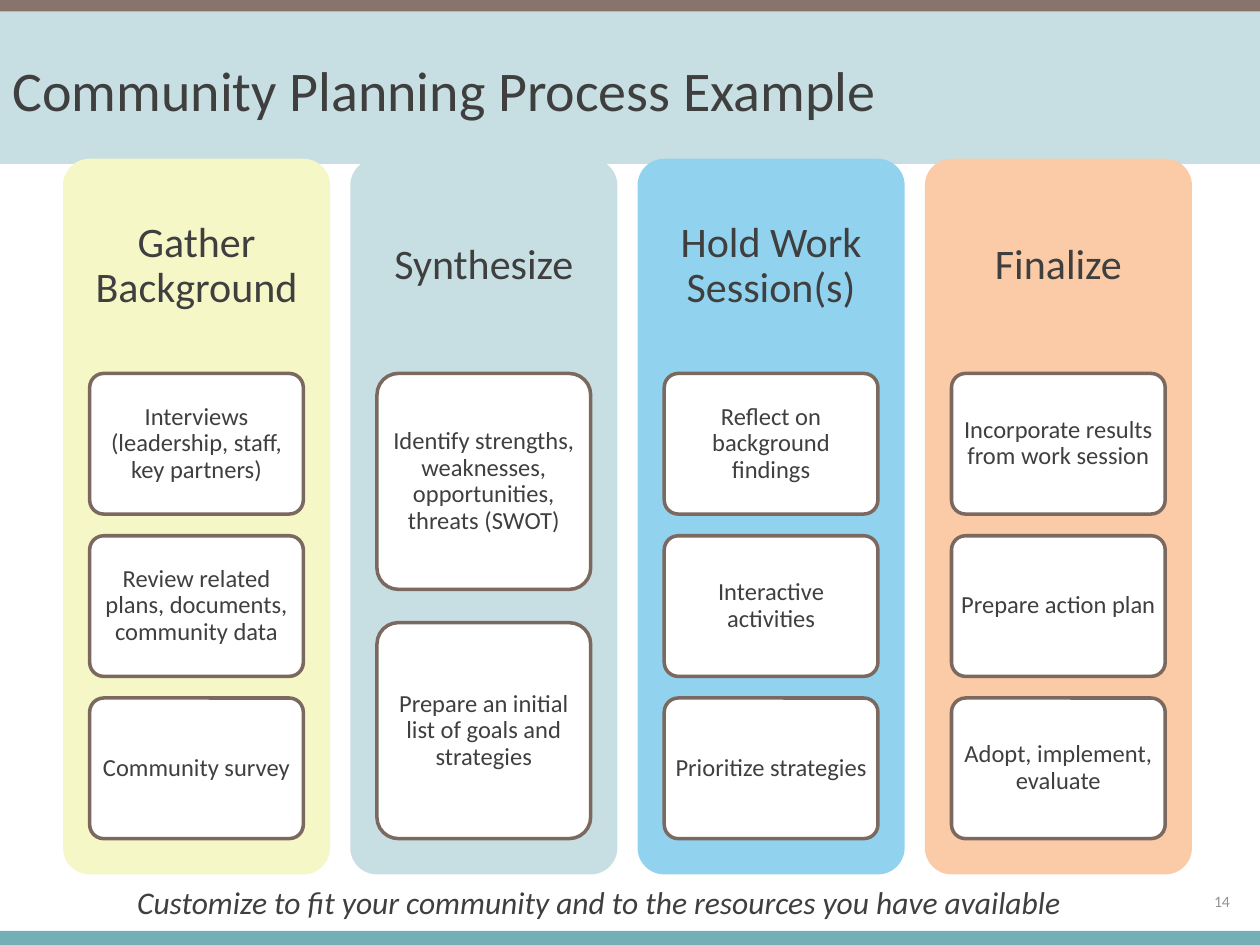
import dataclasses

import pptx
import pptx.dml.color
import pptx.enum.shapes
import pptx.enum.text
import pptx.util


@dataclasses.dataclass(frozen=True)
class Theme:
    font: str = "Calibri"
    text: str = "3F3F3F"
    muted: str = "939393"
    brown: str = "88746A"
    outline: str = "7B6960"
    teal: str = "73AFB6"
    pale_teal: str = "C7DFE2"
    yellow: str = "F5F7C7"
    blue: str = "91D2EF"
    peach: str = "FBCAA6"
    white: str = "FFFFFF"
    title_size: int = 32
    heading_size: int = 24
    footer_size: int = 18
    card_size: int = 14
    number_size: int = 9


theme = Theme()
SHAPE = pptx.enum.shapes.MSO_SHAPE
ALIGN = pptx.enum.text.PP_ALIGN
ANCHOR = pptx.enum.text.MSO_ANCHOR

prs = pptx.Presentation()
prs.slide_width = pptx.util.Inches(10)
prs.slide_height = pptx.util.Inches(7.5)
s = prs.slides.add_slide(prs.slide_layouts[6])


def add_block(kind, x, y, w, h, fill=None, line=None):
    """Place a shape by percent of the slide; without a kind, a text box."""
    box = [round(prs.slide_width * x / 100), round(prs.slide_height * y / 100),
           round(prs.slide_width * w / 100), round(prs.slide_height * h / 100)]
    if kind is None:
        return s.shapes.add_textbox(*box)
    sp = s.shapes.add_shape(kind, *box)
    sp.shadow.inherit = False
    sp.fill.solid()
    sp.fill.fore_color.rgb = pptx.dml.color.RGBColor.from_string(fill)
    if line:
        sp.line.color.rgb = pptx.dml.color.RGBColor.from_string(line)
        sp.line.width = pptx.util.Pt(2)
    else:
        sp.line.fill.background()
    if kind == SHAPE.ROUNDED_RECTANGLE:
        sp.adjustments[0] = 0.1
    return sp


def write(sp, text, size, color=theme.text, align=ALIGN.LEFT, anchor=ANCHOR.MIDDLE,
          insets=(0.1, 0.05), spacing=None, italic=None):
    tf = sp.text_frame
    tf.word_wrap = True
    tf.vertical_anchor = anchor
    tf.margin_left = tf.margin_right = pptx.util.Inches(insets[0])
    tf.margin_top = tf.margin_bottom = pptx.util.Inches(insets[1])
    p = tf.paragraphs[0]
    p.alignment = align
    p.line_spacing = spacing
    r = p.add_run()
    r.text = text
    r.font.name = theme.font
    r.font.size = pptx.util.Pt(size)
    r.font.italic = italic
    r.font.color.rgb = pptx.dml.color.RGBColor.from_string(color)


# Bands, title and footer
for y, h, color in [(0, 1.33, theme.brown), (98.5, 1.5, theme.teal),
                    (1.2, 16.13, theme.pale_teal)]:
    add_block(SHAPE.RECTANGLE, 0, y, 100, h, color)

write(add_block(None, 0, 2.8, 100, 13.2), "Community Planning Process Example",
      theme.title_size)
write(add_block(None, 9.9, 92.8, 88.7, 5.33),
      "Customize to fit your community and to the resources you have available",
      theme.footer_size, anchor=ANCHOR.TOP, italic=True)
write(add_block(None, 76.1, 92.67, 22.5, 5.33), "14", theme.number_size,
      theme.muted, ALIGN.RIGHT)

# Stage columns, each with a heading and an evenly divided stack of cards
stages = [
    ("Gather Background", theme.yellow,
     ["Interviews (leadership, staff, key partners)",
      "Review related plans, documents, community data",
      "Community survey"]),
    ("Synthesize", theme.pale_teal,
     ["Identify strengths, weaknesses, opportunities, threats (SWOT)",
      "Prepare an initial list of goals and strategies"]),
    ("Hold Work Session(s)", theme.blue,
     ["Reflect on background findings",
      "Interactive activities",
      "Prioritize strategies"]),
    ("Finalize", theme.peach,
     ["Incorporate results from work session",
      "Prepare action plan",
      "Adopt, implement, evaluate"]),
]
LEFT, TOP, PITCH = 5, 16.8, 22.8
PANEL_W, PANEL_H = 21.2, 75.73
HEADING_H = PANEL_H * 0.3
CARD_W = PANEL_W * 0.8
STACK_H = PANEL_H * 0.65
GAP_RATIO = 0.154  # gap between cards as a share of card height

for col, (heading, color, cards) in enumerate(stages):
    x = LEFT + col * PITCH
    add_block(SHAPE.ROUNDED_RECTANGLE, x, TOP, PANEL_W, PANEL_H, color)
    write(add_block(None, x, TOP, PANEL_W, HEADING_H), heading, theme.heading_size,
          align=ALIGN.CENTER, insets=(0.1, 0.1), spacing=0.9)

    card_h = STACK_H / (len(cards) + GAP_RATIO * (len(cards) - 1))
    for row, text in enumerate(cards):
        y = TOP + HEADING_H + row * card_h * (1 + GAP_RATIO)
        card = add_block(SHAPE.ROUNDED_RECTANGLE, x + PANEL_W * 0.1, y, CARD_W, card_h,
                         theme.white, theme.outline)
        write(card, text, theme.card_size, align=ALIGN.CENTER, insets=(0.04, 0.03),
              spacing=0.9)

prs.save("out.pptx")
